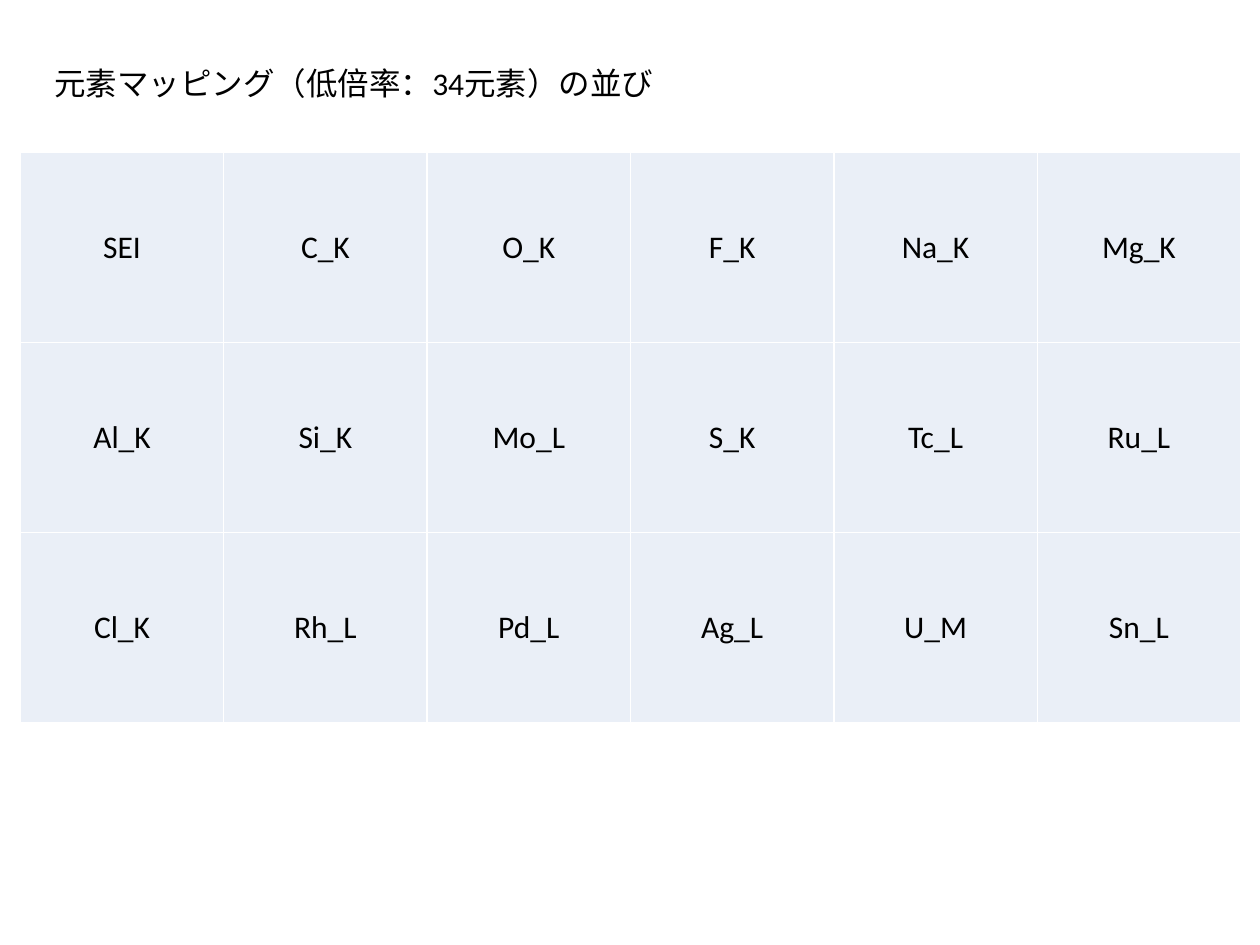
import pptx
import pptx.dml.color
import pptx.enum.text
import pptx.oxml
import pptx.oxml.ns
import pptx.util
from pptx.util import Cm

COLORS = {"text": "000000", "cell": "EAEFF7", "border": "FFFFFF"}
FONT_NAME = "Calibri"
FONT_SIZE = pptx.util.Pt(18)
BORDER_WIDTH = pptx.util.Pt(1)
TITLE = "元素マッピング（低倍率：34元素）の並び"
ELEMENT_MAPS = [
    ["SEI", "C_K", "O_K", "F_K", "Na_K", "Mg_K"],
    ["Al_K", "Si_K", "Mo_L", "S_K", "Tc_L", "Ru_L"],
    ["Cl_K", "Rh_L", "Pd_L", "Ag_L", "U_M", "Sn_L"],
]


def rgb(name):
    return pptx.dml.color.RGBColor.from_string(COLORS[name])


def add_text(paragraph, text, alignment):
    paragraph.alignment = alignment
    run = paragraph.add_run()
    run.text = text
    run.font.name = FONT_NAME
    run.font.size = FONT_SIZE
    run.font.color.rgb = rgb("text")


def set_title(slide, text):
    title = slide.shapes.title
    title.left, title.top = Cm(0.84), Cm(1.17)
    title.width, title.height = Cm(12.7), Cm(1.02)
    frame = title.text_frame
    frame.word_wrap = True
    frame.auto_size = pptx.enum.text.MSO_AUTO_SIZE.SHAPE_TO_FIT_TEXT
    frame.vertical_anchor = pptx.enum.text.MSO_ANCHOR.TOP
    add_text(frame.paragraphs[0], text, pptx.enum.text.PP_ALIGN.LEFT)


def set_borders(cell):
    properties = cell._tc.get_or_add_tcPr()
    for position, side in enumerate(("lnL", "lnR", "lnT", "lnB")):
        line = pptx.oxml.parse_xml(
            f'<a:{side} {pptx.oxml.ns.nsdecls("a")} w="{BORDER_WIDTH}">'
            f'<a:solidFill><a:srgbClr val="{COLORS["border"]}"/></a:solidFill>'
            f"</a:{side}>"
        )
        properties.insert(position, line)


def format_cell(cell, text):
    cell.vertical_anchor = pptx.enum.text.MSO_ANCHOR.MIDDLE
    cell.fill.solid()
    cell.fill.fore_color.rgb = rgb("cell")
    set_borders(cell)
    add_text(cell.text_frame.paragraphs[0], text, pptx.enum.text.PP_ALIGN.CENTER)


def add_element_table(slide, rows):
    shape = slide.shapes.add_table(
        len(rows), len(rows[0]), Cm(0.41), Cm(3.07), Cm(24.6), Cm(11.5)
    )
    table = shape.table
    table.first_row = False
    table.horz_banding = False
    for row_index, row in enumerate(rows):
        for column_index, text in enumerate(row):
            format_cell(table.cell(row_index, column_index), text)


def main():
    presentation = pptx.Presentation()
    presentation.slide_width = Cm(25.4)
    presentation.slide_height = Cm(19.05)
    layout = presentation.slide_layouts.get_by_name("Title Only")
    slide = presentation.slides.add_slide(layout)
    add_element_table(slide, ELEMENT_MAPS)
    set_title(slide, TITLE)
    presentation.save("out.pptx")


if __name__ == "__main__":
    main()
